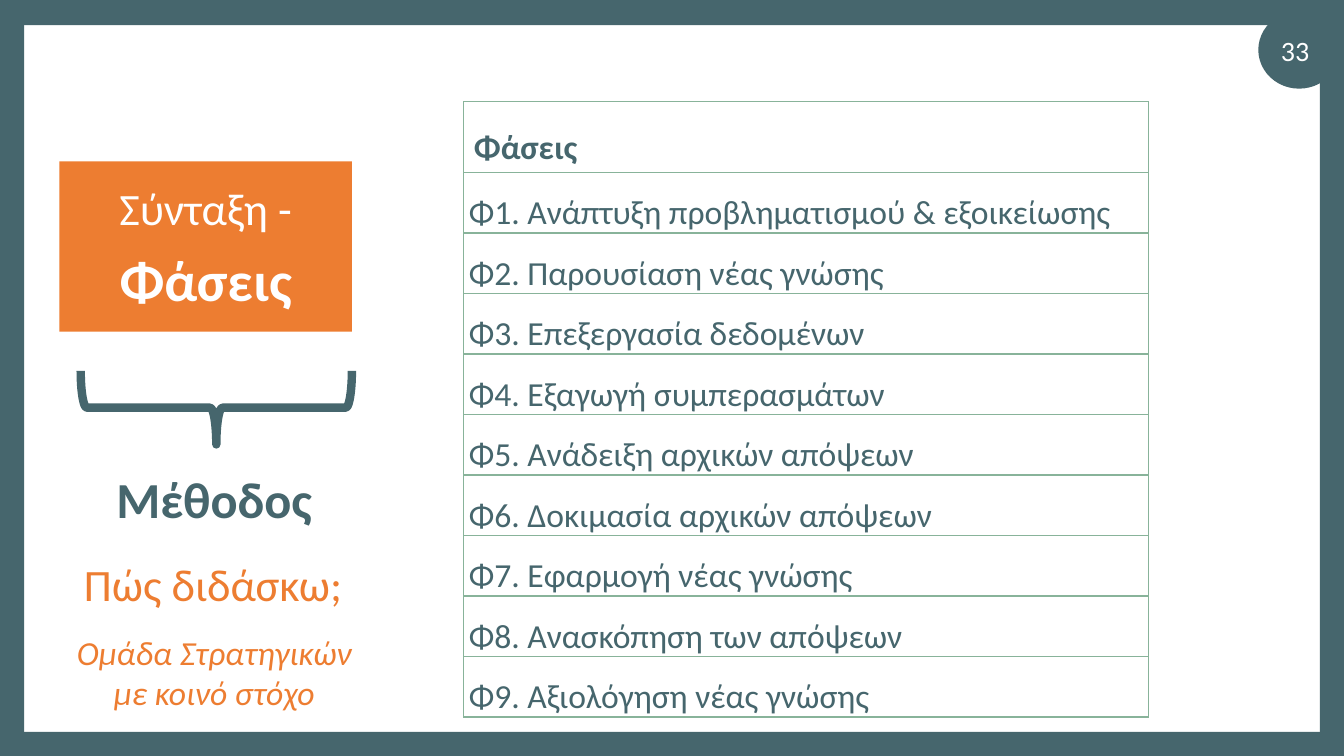
"""Build the slide on the phases of a teaching method."""
from lxml.etree import SubElement
from pptx import Presentation
from pptx.dml.color import RGBColor
from pptx.enum.shapes import MSO_SHAPE as Shape
from pptx.enum.text import MSO_ANCHOR as Anchor, PP_ALIGN as Align
from pptx.oxml.ns import qn
from pptx.util import Inches, Pt

TEAL = RGBColor(0x46, 0x66, 0x6D)
ORANGE = RGBColor(0xED, 0x7D, 0x31)
GREEN = RGBColor(0x88, 0xB3, 0x9A)
WHITE = RGBColor(0xFF, 0xFF, 0xFF)

WIDTH, HEIGHT, EDGE = 13.33, 7.5, 0.24
FRAME = [
    (Shape.OVAL, (12.48, 0.11, 0.81, 0.77)),
    (Shape.RECTANGLE, (0, 0, WIDTH, 0.25)),
    (Shape.RECTANGLE, (0, HEIGHT - EDGE, WIDTH, EDGE)),
    (Shape.RECTANGLE, (WIDTH - EDGE, 0.12, EDGE, 7.26)),
    (Shape.RECTANGLE, (0, 0.12, EDGE, 7.26)),
]
PHASES = [
    "Ανάπτυξη προβληματισμού & εξοικείωσης",
    "Παρουσίαση νέας γνώσης",
    "Επεξεργασία δεδομένων",
    "Εξαγωγή συμπερασμάτων",
    "Ανάδειξη αρχικών απόψεων",
    "Δοκιμασία αρχικών απόψεων",
    "Εφαρμογή νέας γνώσης",
    "Ανασκόπηση των απόψεων",
    "Αξιολόγηση νέας γνώσης",
]


def apply(target, settings):
    """Set each attribute named in settings on the target."""
    for attribute, value in settings.items():
        setattr(target, attribute, value)


def write(paragraph, words, size, color, layout, **style):
    """Write one formatted run into a paragraph."""
    run = paragraph.add_run()
    run.text = words
    apply(run.font, {"name": "Calibri", "size": Pt(size), **style})
    run.font.color.rgb = color
    apply(paragraph, layout)


def write_centered(frame, lines, color, spacing=0.2):
    """Fill a text frame with centred lines of (words, size, style)."""
    apply(frame, {"word_wrap": True, "vertical_anchor": Anchor.MIDDLE})
    for index, (words, size, style) in enumerate(lines):
        paragraph = frame.add_paragraph() if index else frame.paragraphs[0]
        layout = {"alignment": Align.CENTER, "space_before": Pt(size * spacing)}
        write(paragraph, words, size, color, layout, **style)


def add_block(slide, kind, box, color):
    """Add a filled shape without an outline."""
    block = slide.shapes.add_shape(kind, *map(Inches, box))
    block.shadow.inherit = False
    block.fill.solid()
    block.fill.fore_color.rgb = color
    block.line.fill.background()
    return block


def add_label(slide, box, words, size, color, spacing=0.2, **style):
    """Add a centred text box with a single paragraph."""
    label = slide.shapes.add_textbox(*map(Inches, box))
    write_centered(label.text_frame, [(words, size, style)], color, spacing)


def add_brace(slide, box):
    """Add the brace that points down to the method."""
    brace = slide.shapes.add_shape(Shape.RIGHT_BRACE, *map(Inches, box))
    brace.shadow.inherit = False
    brace.rotation = 90
    brace.fill.background()
    brace.line.color.rgb = TEAL
    brace.line.width = Pt(6)


def outline_cell(cell):
    """Draw a thin green border on all sides of a cell."""
    properties = cell._tc.get_or_add_tcPr()
    for position, side in enumerate(("lnL", "lnR", "lnT", "lnB")):
        border = SubElement(properties, qn(f"a:{side}"), w=str(Pt(1)))
        fill = SubElement(border, qn("a:solidFill"))
        SubElement(fill, qn("a:srgbClr"), val=str(GREEN))
        properties.insert(position, border)


def add_phase_table(slide):
    """Add the table with a heading and the numbered phases."""
    rows = ["Φάσεις"] + [f"Φ{n}. {phase}" for n, phase in enumerate(PHASES, 1)]
    box = map(Inches, (4.6, 1.01, 6.79, 4.16))
    table = slide.shapes.add_table(len(rows), 1, *box).table
    apply(table, {"first_row": False, "horz_banding": False})
    insets = {"margin_left": Inches(0.05), "margin_right": Inches(0.05),
              "margin_top": 0, "margin_bottom": 0}
    for index, words in enumerate(rows):
        heading = index == 0
        table.rows[index].height = Inches(0.47 if heading else 0.41)
        cell = table.cell(index, 0)
        cell.fill.background()
        outline_cell(cell)
        apply(cell, {} if heading else insets)
        write(cell.text_frame.paragraphs[0], words, 24, TEAL,
              {"line_spacing": 1.5}, bold=heading)


def main():
    """Build and save the slide."""
    deck = Presentation()
    apply(deck, {"slide_width": Inches(WIDTH), "slide_height": Inches(HEIGHT)})
    slide = deck.slides.add_slide(deck.slide_layouts[6])
    for kind, box in FRAME:
        add_block(slide, kind, box, TEAL)
    add_label(slide, (12.44, 0.3, 0.81, 0.4), "33", 20, WHITE, spacing=0)
    syntax = add_block(slide, Shape.RECTANGLE, (0.59, 1.6, 2.9, 1.69), ORANGE)
    write_centered(syntax.text_frame, [("Σύνταξη -", 32, {}),
                                       ("Φάσεις", 40, {"bold": True})], WHITE)
    add_brace(slide, (1.78, 2.7, 0.73, 2.69))
    add_label(slide, (0.59, 4.52, 3.07, 0.84), "Μέθοδος", 36, TEAL, bold=True)
    add_label(slide, (0.58, 5.37, 3.07, 0.84), "Πώς διδάσκω;", 32, ORANGE)
    add_phase_table(slide)
    add_label(slide, (0.59, 6.21, 3.07, 0.91),
              "Ομάδα Στρατηγικών με κοινό στόχο", 24, ORANGE, italic=True)
    deck.save("out.pptx")


if __name__ == "__main__":
    main()
